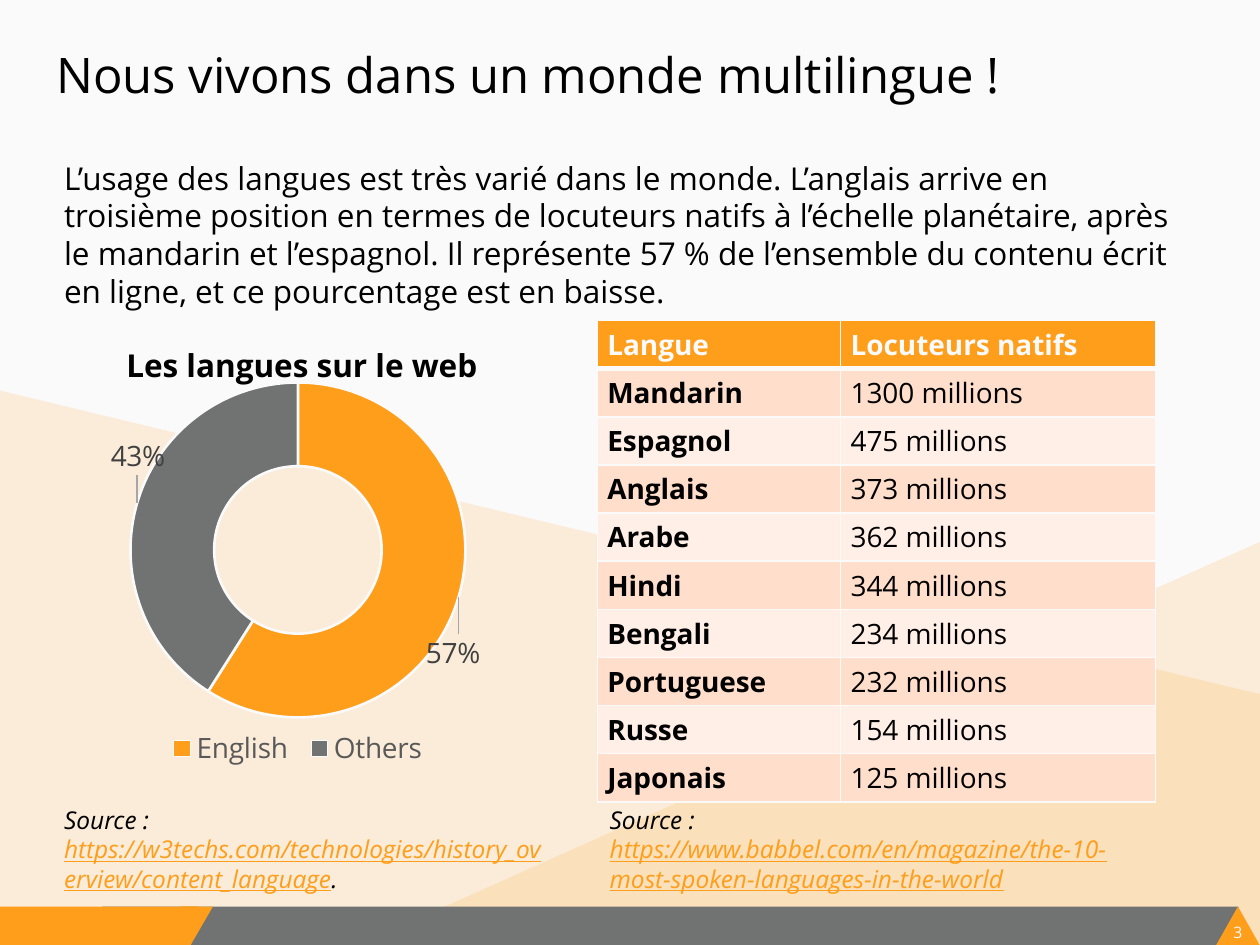
from dataclasses import dataclass

from lxml import etree
from pptx import Presentation
from pptx.chart.data import CategoryChartData
from pptx.dml.color import RGBColor
from pptx.enum import chart as ch, shapes, text
from pptx.oxml import ns
from pptx.util import Pt


@dataclass(frozen=True)
class Theme:
    font: str = "Open Sans"
    orange: str = "FF9E1B"
    grey: str = "707372"
    light: str = "FAFAFA"
    black: str = "000000"
    legend: str = "595959"
    label: str = "404040"
    leader: str = "A6A6A6"
    bands: tuple = ("FFDECB", "FFEFE7")
    title: int = 28
    body: int = 18
    data: int = 16
    source: int = 14
    page: int = 9


T = Theme()
SHAPE = shapes.MSO_SHAPE
LANGUAGES = [
    ("Langue", "Locuteurs natifs"),
    ("Mandarin", "1300 millions"),
    ("Espagnol", "475 millions"),
    ("Anglais", "373 millions"),
    ("Arabe", "362 millions"),
    ("Hindi", "344 millions"),
    ("Bengali", "234 millions"),
    ("Portuguese", "232 millions"),
    ("Russe", "154 millions"),
    ("Japonais", "125 millions"),
]


def rgb(color):
    return RGBColor.from_string(color)


def style(font, size, color, bold=False, italic=False):
    font.name, font.size, font.bold, font.italic = T.font, Pt(size), bold, italic
    font.color.rgb = rgb(color)


def paint(sp, color, alpha=None):
    sp.shadow.inherit = False
    sp.fill.solid()
    sp.fill.fore_color.rgb = rgb(color)
    sp.line.fill.background()
    if alpha:
        clr = sp._element.spPr.find(".//" + ns.qn("a:srgbClr"))
        etree.SubElement(clr, ns.qn("a:alpha"), val=str(alpha * 1000))


def add_text(s, box, parts, size, italic=False):
    """Text box with one paragraph; parts are (text, color, underline)."""
    tf = s.shapes.add_textbox(*map(Pt, box)).text_frame
    tf.word_wrap = True
    p = tf.paragraphs[0]
    for words, color, underline in parts:
        r = p.add_run()
        r.text = words
        style(r.font, size, color, italic=italic)
        r.font.underline = underline
    return tf


def add_background(s, box):
    x, y, w, h = box
    s.background.fill.solid()
    s.background.fill.fore_color.rgb = rgb(T.light)
    slopes = [
        [(0, 223.2), (w, 396.7), (w, 538.6), (0, h)],
        [(w, 309.6), (w, h), (205.2, h)],
    ]
    for points in slopes:
        start, *rest = [(Pt(x + px), Pt(y + py)) for px, py in points]
        builder = s.shapes.build_freeform(*start, scale=1.0)
        builder.add_line_segments(rest, close=True)
        paint(builder.convert_to_shape(), T.orange, alpha=15)


def add_footer(s, box, number):
    x, y, w, h = box

    def block(kind, left, width, height, color):
        sp = s.shapes.add_shape(kind, Pt(x + left), Pt(y), Pt(width), Pt(height))
        paint(sp, color)
        return sp

    block(SHAPE.RECTANGLE, 58.3, 649.4, h, T.grey)
    block(SHAPE.RECTANGLE, 0, 108, h, T.orange)
    block(SHAPE.ISOSCELES_TRIANGLE, w - 25.2, 25.2, h, T.orange)
    slant = block(SHAPE.PARALLELOGRAM, 96.5, 25.2, h, T.orange)
    slant.adjustments[0] = 0.58
    slant.rotation = 180
    block(SHAPE.RECTANGLE, 103, 10, 9.4, T.orange)

    # Page number
    tf = add_text(s, (x + w - 18.7, y + 9.3, 12.2, 10.8),
                  [(number, T.light, False)], T.page)
    tf.margin_left = tf.margin_right = tf.margin_top = tf.margin_bottom = 0
    tf.paragraphs[0].alignment = text.PP_ALIGN.CENTER


def set_layout(parent, index, **values):
    """Manual chart layout, as fractions of the chart."""
    for old in parent.findall(ns.qn("c:layout")):
        parent.remove(old)
    layout = etree.Element(ns.qn("c:layout"))
    manual = etree.SubElement(layout, ns.qn("c:manualLayout"))
    for name, value in values.items():
        etree.SubElement(manual, ns.qn("c:" + name), val=str(value))
    parent.insert(index, layout)


def add_line_color(ln, color):
    fill = etree.SubElement(ln, ns.qn("a:solidFill"))
    etree.SubElement(fill, ns.qn("a:srgbClr"), val=color)


def add_web_chart(s, box):
    data = CategoryChartData()
    data.categories = ["English", "Others"]
    data.add_series("Series 1", (59, 41))
    chart = s.shapes.add_chart(ch.XL_CHART_TYPE.DOUGHNUT, *map(Pt, box), data).chart
    style(chart.font, T.data, T.black)
    edges = {"xMode": "edge", "yMode": "edge"}

    # Title and legend
    tf = chart.chart_title.text_frame
    tf.text = "Les langues sur le web"
    style(tf.paragraphs[0].runs[0].font, T.body, T.black, bold=True)
    set_layout(chart.chart_title._element, 1, **edges, x=0.14, y=0.01)
    chart.has_legend = True
    chart.legend.position = ch.XL_LEGEND_POSITION.BOTTOM
    chart.legend.include_in_layout = False
    style(chart.legend.font, T.data, T.legend)
    set_layout(chart.legend._element, 1, **edges, x=0.22, y=0.88, w=0.56, h=0.1)

    # Ring
    space = chart._chartSpace
    set_layout(space.xpath(".//c:plotArea")[0], 0, layoutTarget="inner",
               **edges, x=0.16, y=0.1, w=0.68, h=0.78)
    space.xpath(".//c:holeSize")[0].set("val", "75")
    points = chart.plots[0].series[0].points
    for i, (color, label) in enumerate([(T.orange, "57%"), (T.grey, "43%")]):
        fmt = points[i].format
        fmt.fill.solid()
        fmt.fill.fore_color.rgb = rgb(color)
        fmt.line.color.rgb = rgb(T.light)
        fmt.line.width = Pt(1.5)
        tf = points[i].data_label.text_frame
        tf.text = label
        style(tf.paragraphs[0].runs[0].font, T.data, T.label)

    # Labels moved off the ring, with leader lines
    offsets = [(0.07, 0.15), (-0.08, -0.13)]
    for label, (dx, dy) in zip(space.xpath(".//c:dLbl"), offsets):
        set_layout(label, 1, x=dx, y=dy)
    for show in space.xpath(".//c:ser/c:dLbls/c:showLeaderLines"):
        leader = etree.Element(ns.qn("c:leaderLines"))
        sp_pr = etree.SubElement(leader, ns.qn("c:spPr"))
        add_line_color(etree.SubElement(sp_pr, ns.qn("a:ln"), w=str(Pt(0.75))), T.leader)
        show.addnext(leader)


def set_borders(cell, bottom):
    tc_pr = cell._tc.get_or_add_tcPr()
    widths = {"lnL": 1, "lnR": 1, "lnT": 1, "lnB": bottom}
    for i, (side, width) in enumerate(widths.items()):
        ln = etree.Element(ns.qn("a:" + side), w=str(Pt(width)))
        add_line_color(ln, T.light)
        tc_pr.insert(i, ln)


def add_language_table(s, box):
    x, y, w, h = box
    table = s.shapes.add_table(len(LANGUAGES), 2, *map(Pt, box)).table
    for column, width in zip(table.columns, (139, w - 139)):
        column.width = Pt(width)
    for i, row in enumerate(LANGUAGES):
        table.rows[i].height = Pt(h / len(LANGUAGES))
        header = i == 0
        for j, words in enumerate(row):
            cell = table.cell(i, j)
            cell.text = words
            cell.vertical_anchor = text.MSO_ANCHOR.MIDDLE
            cell.margin_left = cell.margin_right = Pt(5.8)
            cell.margin_top = cell.margin_bottom = Pt(2.8)
            cell.fill.solid()
            cell.fill.fore_color.rgb = rgb(T.orange if header else T.bands[(i - 1) % 2])
            set_borders(cell, 3 if header else 1)
            style(cell.text_frame.paragraphs[0].runs[0].font, T.data,
                  T.light if header else T.black, bold=header or j == 0)


def add_source(s, box, address, end=""):
    parts = [("Source : ", T.black, False), (address, T.orange, True)]
    if end:
        parts.append((end, T.black, False))
    add_text(s, box, parts, T.source, italic=True)


def main():
    prs = Presentation()
    prs.slide_width, prs.slide_height = Pt(720), Pt(540)
    s = prs.slides.add_slide(prs.slide_layouts[6])
    add_background(s, (0, 0, 720, 540))
    add_footer(s, (0, 518, 720, 22.3), "3")
    add_text(s, (25.2, 21.6, 664.6, 90),
             [("Nous vivons dans un monde multilingue !", T.black, False)], T.title)
    add_language_table(s, (341.3, 183.2, 319, 275))
    add_source(s, (341.3, 456.5, 319, 58.3),
               "https://www.babbel.com/en/magazine/the-10-most-spoken-languages-in-the-world")
    add_source(s, (29.5, 456.5, 293.8, 58.3),
               "https://w3techs.com/technologies/history_overview/content_language", ".")
    add_web_chart(s, (29.5, 188, 281.5, 257.8))
    add_text(s, (29.5, 87.1, 653.8, 72.7), [(
        "L’usage des langues est très varié dans le monde. L’anglais arrive en troisième "
        "position en termes de locuteurs natifs à l’échelle planétaire, après le mandarin "
        "et l’espagnol. Il représente 57 % de l’ensemble du contenu écrit en ligne, et ce "
        "pourcentage est en baisse.", T.black, False)], T.body)
    prs.save("out.pptx")


if __name__ == "__main__":
    main()
